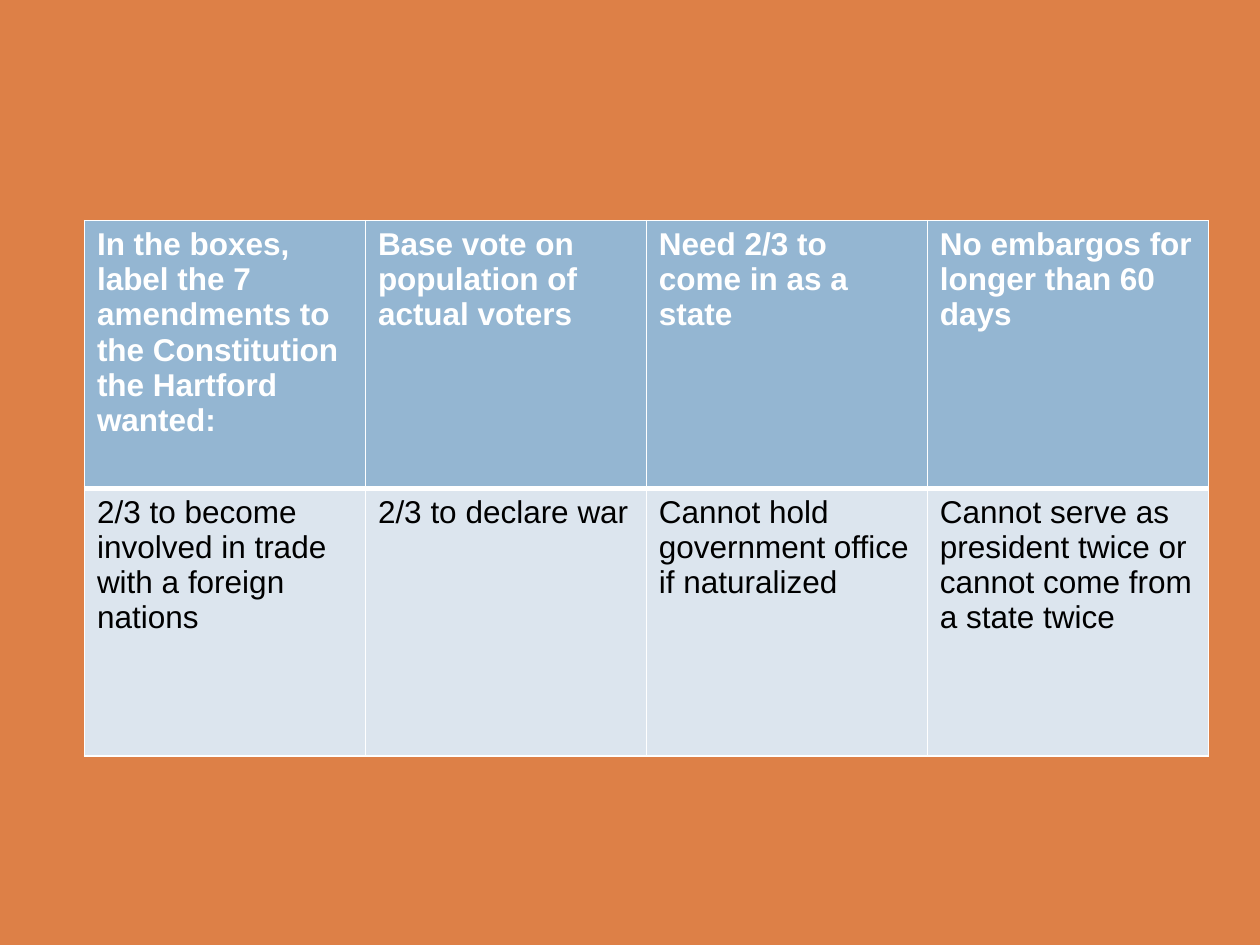
from dataclasses import dataclass

from lxml import etree
from pptx import Presentation
from pptx.dml.color import RGBColor
from pptx.oxml.ns import qn
from pptx.util import Inches, Pt


@dataclass(frozen=True)
class Theme:
    back: str = "DD8047"
    head: str = "94B6D2"
    body: str = "DCE5EE"
    light: str = "FFFFFF"
    dark: str = "000000"
    font: str = "Arial"
    size: float = 18
    thin: float = 1
    thick: float = 3


@dataclass(frozen=True)
class Row:
    texts: tuple[str, ...]
    fill: str
    color: str
    bold: bool
    top: float
    base: float


THEME = Theme()
ROWS = (
    Row(
        (
            "In the boxes, label the 7 amendments to the Constitution the Hartford wanted:",
            "Base vote on population of actual voters",
            "Need 2/3 to come in as a state",
            "No embargos for longer than 60 days",
        ),
        THEME.head, THEME.light, True, THEME.thin, THEME.thick,
    ),
    Row(
        (
            "2/3 to become involved in trade with a foreign nations",
            "2/3 to declare war",
            "Cannot hold government office if naturalized",
            "Cannot serve as president twice or cannot come from a state twice",
        ),
        THEME.body, THEME.dark, False, THEME.thick, THEME.thin,
    ),
)


def write(frame, text: str, *, color: str, bold: bool) -> None:
    run = frame.paragraphs[0].add_run()
    run.text = text
    font = run.font
    font.name = THEME.font
    font.size = Pt(THEME.size)
    font.bold = bold
    font.color.rgb = RGBColor.from_string(color)


def edge(cell, row: Row) -> None:
    props = cell._tc.get_or_add_tcPr()
    sides = {"L": THEME.thin, "R": THEME.thin, "T": row.top, "B": row.base}
    for spot, (side, width) in enumerate(sides.items()):
        line = etree.Element(qn(f"a:ln{side}"), w=str(Pt(width)))
        fill = etree.SubElement(line, qn("a:solidFill"))
        etree.SubElement(fill, qn("a:srgbClr"), val=THEME.light)
        props.insert(spot, line)


def draw(slide, rows: tuple[Row, ...]) -> None:
    count = len(rows[0].texts)
    table = slide.shapes.add_table(
        len(rows), count, Inches(0.67), Inches(1.75), Inches(8.92), Inches(4.25)
    ).table
    table.horz_banding = False
    for y, row in enumerate(rows):
        for x, text in enumerate(row.texts):
            cell = table.cell(y, x)
            cell.fill.solid()
            cell.fill.fore_color.rgb = RGBColor.from_string(row.fill)
            write(cell.text_frame, text, color=row.color, bold=row.bold)
            edge(cell, row)


def main() -> None:
    deck = Presentation()
    deck.slide_width = Inches(10)
    deck.slide_height = Inches(7.5)
    slide = deck.slides.add_slide(deck.slide_layouts[6])
    slide.background.fill.solid()
    slide.background.fill.fore_color.rgb = RGBColor.from_string(THEME.back)
    draw(slide, ROWS)
    deck.save("out.pptx")


if __name__ == "__main__":
    main()
